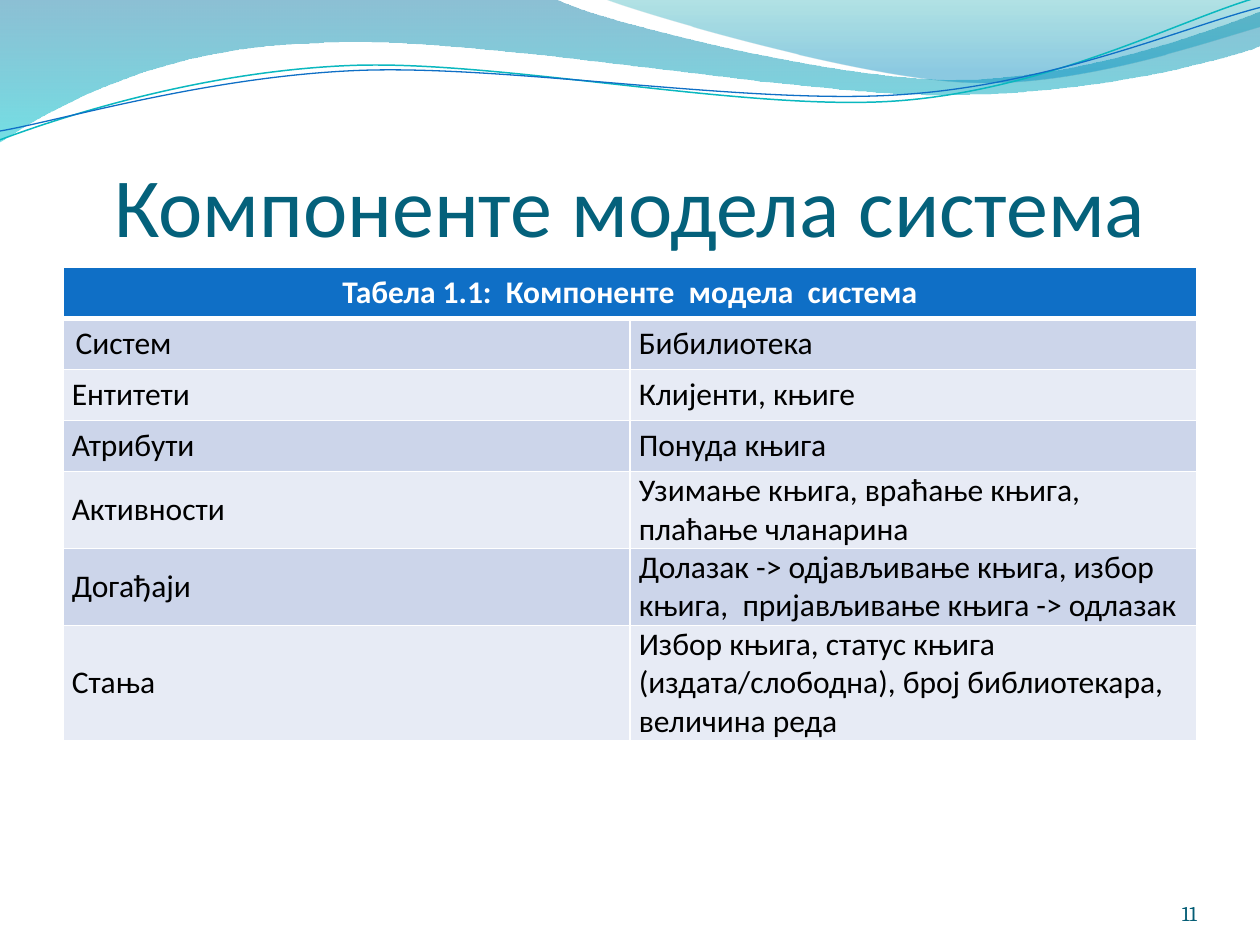
from math import cos, radians, sin

from lxml.etree import SubElement
from pptx import Presentation
from pptx.dml.color import RGBColor
from pptx.enum.text import MSO_ANCHOR, PP_ALIGN
from pptx.oxml.ns import qn
from pptx.util import Inches, Pt

BANDS = [
    ([[(0, 0)], [(4.4, -0.01)],
      [(4.76, 0.17), (6.64, 0.63), (7.58, 0.63)],
      [(8.53, 0.63), (9.58, 0.26), (10, 0.09)],
      [(10.01, 0.36)],
      [(9.83, 0.44), (8.7, 0.76), (7.46, 0.75)],
      [(6.22, 0.75), (3.82, 0.28), (2.57, 0.34)],
      [(1.29, 0.36), (0.46, 0.83), (-0.01, 1.13)],
      [(0, 0)]],
     [(0, "0074A1", 45), (1, "00C6CF", 55)]),
    ([[(4.79, -0.01)],
      [(5.09, 0.11), (6.82, 0.62), (7.69, 0.65)],
      [(8.56, 0.69), (9.61, 0.32), (10, 0.21)],
      [(10, 0)], [(4.79, -0.01)]],
     [(0, "00A1A9", 30), (0.8, "008BBF", 45)]),
]
TILT = -2.7
WAVES = [
    ([[(0, 1.11)],
      [(0.48, 0.93), (1.58, 0.57), (2.77, 0.52)],
      [(3.95, 0.47), (5.93, 0.89), (7.13, 0.8)],
      [(8.33, 0.71), (9.38, 0.15), (9.98, -0.02)]],
     (4.99, 0.57), "0AB8BF", 0.85),
    ([[(0, 1.04)],
      [(0.47, 0.96), (1.64, 0.61), (2.83, 0.56)],
      [(4.03, 0.51), (5.97, 0.84), (7.17, 0.75)],
      [(8.36, 0.67), (9.41, 0.21), (10, 0.06)]],
     (5, 0.59), "0F6FC6", 0.75),
]
HEAD = "Табела 1.1:  Компоненте  модела  система"
ROWS = [
    ("Систем", "Бибилиотека"),
    ("Ентитети", "Клијенти, књиге"),
    ("Атрибути", "Понуда књига"),
    ("Активности", "Узимање књига, враћање књига, плаћање чланарина"),
    ("Догађаји", "Долазак -> одјављивање књига, избор књига,  "
                 "пријављивање књига -> одлазак"),
    ("Стања", "Избор књига, статус књига (издата/слободна), "
              "број библиотекара, величина реда"),
]


def color(code):
    return RGBColor.from_string(code)


def style(item, **look):
    for name, value in look.items():
        setattr(item, name, value)


def write(frame, text, size, code, face="Calibri", bold=False, align=PP_ALIGN.LEFT):
    line = frame.paragraphs[0]
    line.alignment = align
    run = line.add_run()
    run.text = text
    style(run.font, size=Pt(size), name=face, bold=bold)
    run.font.color.rgb = color(code)


def draw(slide, parts, close):
    dots = [(Inches(x), Inches(y)) for part in parts for x, y in part]
    pen = slide.shapes.build_freeform(*dots[0], scale=1.0)
    pen.add_line_segments(dots[1:], close=close)
    shape = pen.convert_to_shape()
    shape.shadow.inherit = False
    legs = iter(list(shape._element.spPr.iter(qn("a:lnTo"))))
    for part in parts[1:]:
        first, *rest = [next(legs) for dot in part]
        if rest:
            first.tag = qn("a:cubicBezTo")
        for leg in rest:
            first.append(leg[0])
            leg.getparent().remove(leg)
    return shape


def band(slide, parts, stops):
    shape = draw(slide, parts, True)
    shape.line.fill.background()
    shape.fill.gradient()
    shape.fill.gradient_angle = 270
    for stop, (place, code, alpha) in zip(shape.fill.gradient_stops, stops):
        stop.position = place
        stop.color.rgb = color(code)
    tones = shape._element.spPr.iter(qn("a:srgbClr"))
    for tone, (place, code, alpha) in zip(tones, stops):
        SubElement(tone, qn("a:alpha"), val=str(alpha * 1000))


def turn(dot, hub, angle):
    x, y = dot[0] - hub[0], dot[1] - hub[1]
    c, s = cos(radians(angle)), sin(radians(angle))
    return hub[0] + x * c - y * s, hub[1] + x * s + y * c


def wave(slide, parts, hub, code, width):
    flat = [[turn(dot, hub, -TILT) for dot in part] for part in parts]
    shape = draw(slide, flat, False)
    shape.rotation = TILT
    shape.fill.background()
    shape.line.color.rgb = color(code)
    shape.line.width = Pt(width)


def paint(cell, code, top, base):
    props = cell._tc.get_or_add_tcPr()
    for side, width in zip("LRTB", (1, 1, top, base)):
        edge = SubElement(props, qn("a:ln" + side), w=str(Pt(width)))
        fill = SubElement(edge, qn("a:solidFill"))
        SubElement(fill, qn("a:srgbClr"), val="FFFFFF")
    cell.fill.solid()
    cell.fill.fore_color.rgb = color(code)


def grid(slide):
    count = len(ROWS) + 1
    frame = slide.shapes.add_table(
        count, 2, Inches(0.5), Inches(2.12), Inches(9), Inches(2.84))
    table = frame.table
    for row in table.rows:
        row.height = Inches(2.84 / count)
    frame.height = Inches(3.72)
    for cell in table.rows[0].cells:
        paint(cell, "0F6FC6", 1, 3)
    table.cell(0, 0).merge(table.cell(0, 1))
    write(table.cell(0, 0).text_frame, HEAD, 18, "FFFFFF", bold=True,
          align=PP_ALIGN.CENTER)
    tight = dict(margin_left=Inches(0.07), margin_right=Inches(0.07),
                 margin_top=0, margin_bottom=0, vertical_anchor=MSO_ANCHOR.MIDDLE)
    for i, texts in enumerate(ROWS, 1):
        for j, text in enumerate(texts):
            cell = table.cell(i, j)
            paint(cell, "CCD5EA" if i % 2 else "E7EBF5", 3 if i == 1 else 1, 1)
            if (i, j) != (1, 0):
                style(cell, **tight)
            write(cell.text_frame, text, 18, "000000")


def label(shape, box, text, size, code, top=0, **look):
    left, high, width, height = map(Inches, box)
    style(shape, left=left, top=high, width=width, height=height)
    style(shape.text_frame, word_wrap=True, vertical_anchor=MSO_ANCHOR.BOTTOM,
          margin_left=0, margin_right=0, margin_top=Inches(top), margin_bottom=0)
    write(shape.text_frame, text, size, code, **look)


def main():
    deck = Presentation()
    style(deck, slide_width=Inches(10), slide_height=Inches(7.5))
    slide = deck.slides.add_slide(deck.slide_layouts[5])
    for item in BANDS:
        band(slide, *item)
    for item in WAVES:
        wave(slide, *item)
    label(slide.shapes.title, (0.5, 0.77, 9, 1.25), "Компоненте модела система",
          48, "04617B", top=0.05, align=PP_ALIGN.CENTER)
    grid(slide)
    label(slide.shapes.add_textbox(0, 0, 0, 0), (8.67, 6.95, 0.83, 0.4), "11",
          12, "045D75", face="Cambria", align=PP_ALIGN.RIGHT)
    deck.save("out.pptx")


if __name__ == "__main__":
    main()
